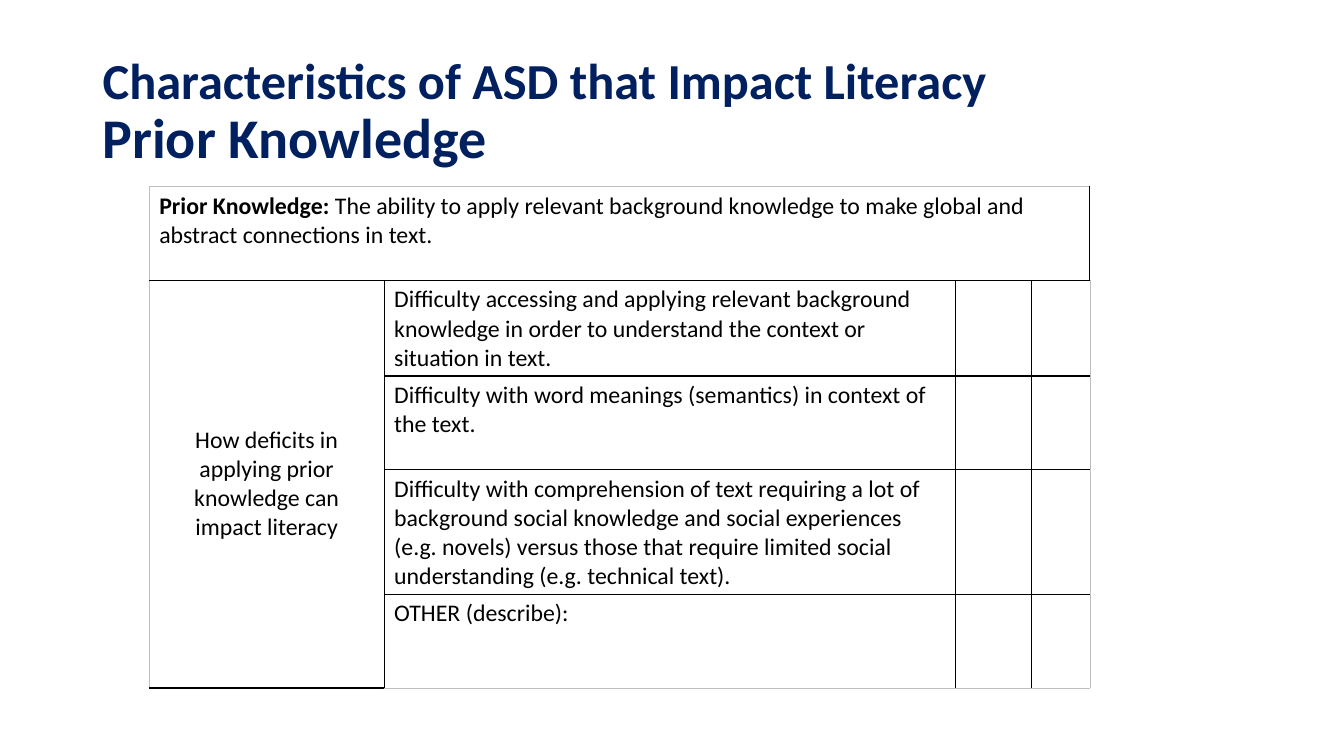
from lxml import etree
from pptx import Presentation
from pptx.dml.color import RGBColor
from pptx.enum import text as t
from pptx.oxml import ns
from pptx.util import Inches, Pt

NAVY = RGBColor(0x00, 0x20, 0x60)
BLACK = RGBColor(0x00, 0x00, 0x00)
GRAY = RGBColor(0xBF, 0xBF, 0xBF)
WHITE = RGBColor(0xFF, 0xFF, 0xFF)
FONT = "Calibri"

TITLE = "Characteristics of ASD that Impact Literacy\vPrior Knowledge"
TERM = "Prior Knowledge: "
MEANING = ("The ability to apply relevant background knowledge to make global "
           "and abstract connections in text.")
TOPIC = "How deficits in applying prior knowledge can impact literacy"
ITEMS = [
    "Difficulty accessing and applying relevant background knowledge in order "
    "to understand the context or situation in text.",
    "Difficulty with word meanings (semantics) in context of the text.",
    "Difficulty with comprehension of text requiring a lot of background social "
    "knowledge and social experiences (e.g. novels) versus those that require "
    "limited social understanding (e.g. technical text).",
    "OTHER (describe):",
]
COLS = [2.33, 5.67, 0.75, 0.58]
ROW = 0.93


def style(run, size, color, bold=False):
    run.font.name = FONT
    run.font.size = Pt(size)
    run.font.bold = bold
    run.font.color.rgb = color


def edge(cell, side, color, width):
    line = etree.SubElement(cell._tc.get_or_add_tcPr(), ns.qn(f"a:ln{side}"),
                            w=str(Pt(width)))
    fill = etree.SubElement(line, ns.qn("a:solidFill"))
    etree.SubElement(fill, ns.qn("a:srgbClr"), val=str(color))


def add_title(slide, left, top, width, height):
    box = slide.shapes.add_textbox(*map(Inches, (left, top, width, height)))
    frame = box.text_frame
    frame.word_wrap = True
    frame.vertical_anchor = t.MSO_ANCHOR.MIDDLE
    para = frame.paragraphs[0]
    para.text = TITLE
    para.line_spacing = 0.9
    for run, size in zip(para.runs, (36, 40)):
        style(run, size, NAVY, True)


def add_grid(slide, left, top):
    rows, cols = len(ITEMS) + 1, len(COLS)
    size = (left, top, sum(COLS), ROW * rows)
    grid = slide.shapes.add_table(rows, cols, *map(Inches, size)).table
    grid.first_row = grid.horz_banding = False
    for col, width in zip(grid.columns, COLS):
        col.width = Inches(width)
    for row in grid.rows:
        row.height = Inches(ROW)

    for r in range(rows):
        for c in range(cols):
            cell = grid.cell(r, c)
            outer = {"L": c == 0, "R": c == cols - 1,
                     "T": r == 0, "B": r == rows - 1}
            for side, out in outer.items():
                edge(cell, side, GRAY if out else BLACK, 0.5 if out else 1)
            cell.fill.solid()
            cell.fill.fore_color.rgb = WHITE

    head, topic = grid.cell(0, 0), grid.cell(1, 0)
    head.merge(grid.cell(0, cols - 1))
    topic.merge(grid.cell(rows - 1, 0))
    para = head.text_frame.paragraphs[0]
    for words, bold in ((TERM, True), (MEANING, False)):
        run = para.add_run()
        run.text = words
        style(run, 17, BLACK, bold)

    body = [grid.cell(r, 1) for r in range(1, rows)]
    for cell, words in zip([topic] + body, [TOPIC] + ITEMS):
        cell.text_frame.text = words
        style(cell.text_frame.paragraphs[0].runs[0], 17, BLACK)
    topic.vertical_anchor = t.MSO_ANCHOR.MIDDLE
    topic.text_frame.paragraphs[0].alignment = t.PP_ALIGN.CENTER


def main():
    deck = Presentation()
    deck.slide_width, deck.slide_height = Inches(13.33), Inches(7.5)
    slide = deck.slides.add_slide(deck.slide_layouts[6])
    add_title(slide, 0.92, 0.4, 11.5, 1.45)
    add_grid(slide, 1.48, 1.85)
    deck.save("out.pptx")


if __name__ == "__main__":
    main()
